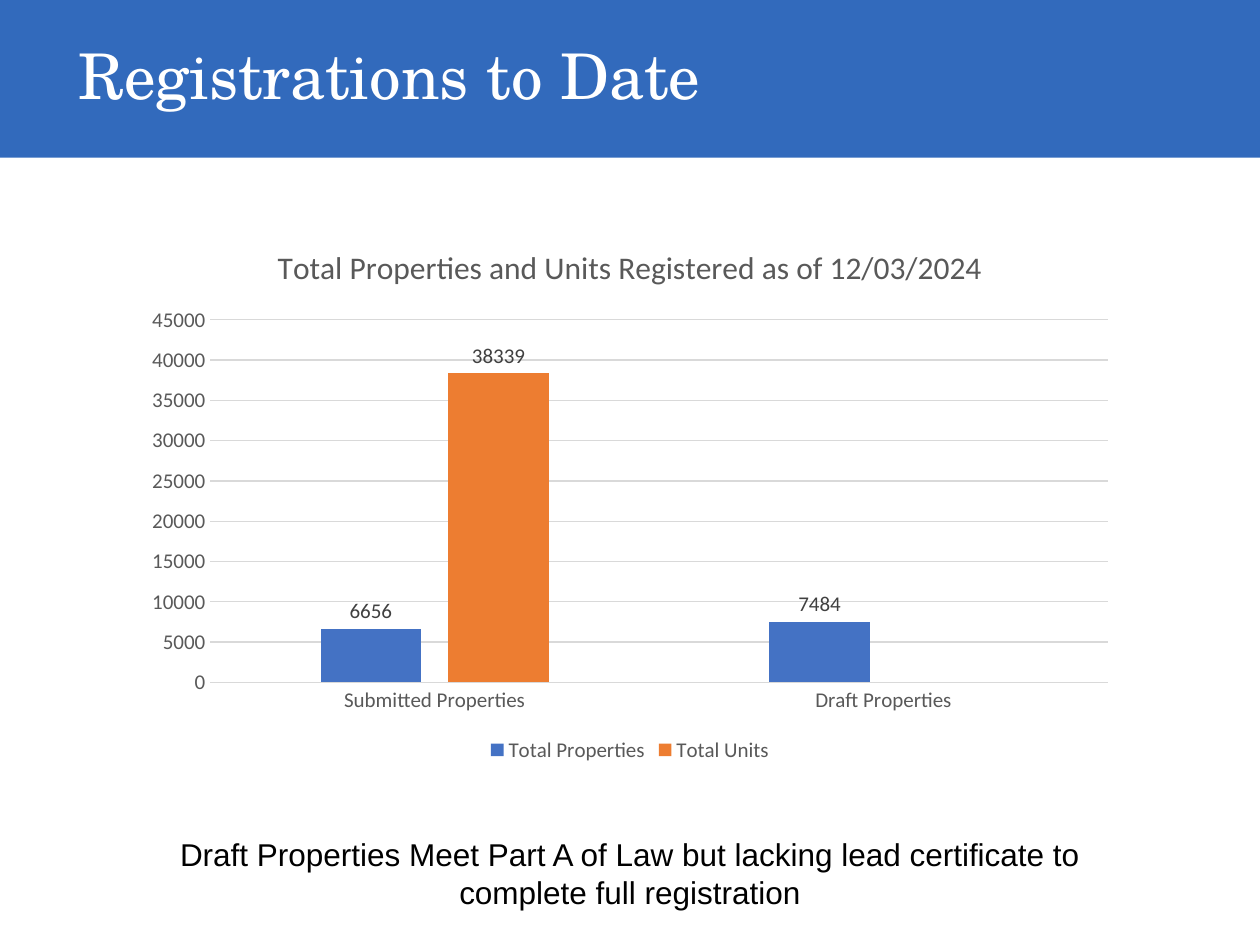
from dataclasses import dataclass

from pptx import Presentation
from pptx.chart.data import CategoryChartData
from pptx.dml.color import RGBColor
from pptx.enum.chart import XL_CHART_TYPE, XL_LABEL_POSITION, XL_LEGEND_POSITION, XL_TICK_MARK
from pptx.enum.shapes import MSO_SHAPE
from pptx.enum.text import MSO_ANCHOR, MSO_AUTO_SIZE, PP_ALIGN
from pptx.util import Cm, Pt

HEADING = "Registrations to Date"
CHART_HEADING = "Total Properties and Units Registered as of 12/03/2024"
NOTE = ("Draft Properties Meet Part A of Law but lacking lead certificate "
        "to complete full registration")
STATUSES = ["Submitted Properties", "Draft Properties"]
REGISTRATIONS = [
    ("Total Properties", (6656, 7484), "4472C4"),
    ("Total Units", (38339, None), "ED7D31"),
]


@dataclass(frozen=True)
class Theme:
    band: str = "326ABC"
    white: str = "FFFFFF"
    black: str = "000000"
    axis_text: str = "595959"
    label_text: str = "404040"
    rule: str = "D9D9D9"
    heading_font: str = "TeX Gyre Schola"
    chart_font: str = "Calibri"
    note_font: str = "Arial"
    heading_size: int = 36
    large_size: int = 18
    chart_size: int = 12


THEME = Theme()
SLIDE_WIDTH, SLIDE_HEIGHT = Cm(25.4), Cm(19.05)
CONTENT_WIDTH = Cm(20.07)
CONTENT_LEFT = (SLIDE_WIDTH - CONTENT_WIDTH) // 2


def format_font(font, name, size, color):
    font.name, font.size, font.bold = name, Pt(size), False
    font.color.rgb = RGBColor.from_string(color)


def write_text(frame, text, *, font, size, color, align=PP_ALIGN.LEFT,
               anchor=MSO_ANCHOR.TOP, line_spacing=None):
    frame.word_wrap = True
    frame.auto_size = MSO_AUTO_SIZE.NONE
    frame.vertical_anchor = anchor
    paragraph = frame.paragraphs[0]
    paragraph.alignment = align
    paragraph.line_spacing = line_spacing
    run = paragraph.add_run()
    run.text = text
    format_font(run.font, font, size, color)


def add_header(slide):
    band = slide.shapes.add_shape(MSO_SHAPE.RECTANGLE, 0, 0, SLIDE_WIDTH, Cm(3.18))
    band.shadow.inherit = False
    band.fill.solid()
    band.fill.fore_color.rgb = RGBColor.from_string(THEME.band)
    band.line.fill.background()

    heading = slide.shapes.title
    heading.element.addprevious(band.element)  # the band sits behind the heading
    heading.left, heading.top = Cm(1.32), Cm(0.28)
    heading.width, heading.height = Cm(20.32), Cm(2.62)
    write_text(heading.text_frame, HEADING, font=THEME.heading_font,
               size=THEME.heading_size, color=THEME.white,
               anchor=MSO_ANCHOR.MIDDLE, line_spacing=0.9)


def style_rule(line):
    line.color.rgb = RGBColor.from_string(THEME.rule)
    line.width = Pt(0.75)


def add_registrations_chart(slide):
    registrations = CategoryChartData()
    registrations.categories = STATUSES
    for name, counts, _ in REGISTRATIONS:
        registrations.add_series(name, counts)
    chart = slide.shapes.add_chart(
        XL_CHART_TYPE.COLUMN_CLUSTERED, CONTENT_LEFT, Cm(4.47),
        CONTENT_WIDTH, Cm(11), registrations).chart
    format_font(chart.font, THEME.chart_font, THEME.chart_size, THEME.axis_text)

    chart.has_title = True
    chart.chart_title.include_in_layout = False
    caption = chart.chart_title.text_frame.paragraphs[0].add_run()
    caption.text = CHART_HEADING
    format_font(caption.font, THEME.chart_font, THEME.large_size, THEME.axis_text)

    chart.has_legend = True
    chart.legend.position = XL_LEGEND_POSITION.BOTTOM
    chart.legend.include_in_layout = False

    for axis in (chart.category_axis, chart.value_axis):
        axis.major_tick_mark = axis.minor_tick_mark = XL_TICK_MARK.NONE
    style_rule(chart.category_axis.format.line)
    chart.value_axis.format.line.fill.background()
    style_rule(chart.value_axis.major_gridlines.format.line)

    columns = chart.plots[0]
    columns.gap_width, columns.overlap = 219, -27
    columns.vary_by_categories = False
    for series, (_, _, color) in zip(columns.series, REGISTRATIONS):
        series.format.fill.solid()
        series.format.fill.fore_color.rgb = RGBColor.from_string(color)
        labels = series.data_labels
        labels.show_value = True
        labels.position = XL_LABEL_POSITION.OUTSIDE_END
        format_font(labels.font, THEME.chart_font, THEME.chart_size, THEME.label_text)


def add_note(slide):
    note = slide.shapes.add_textbox(CONTENT_LEFT, Cm(16.71), CONTENT_WIDTH, Cm(1.8))
    write_text(note.text_frame, NOTE, font=THEME.note_font, size=THEME.large_size,
               color=THEME.black, align=PP_ALIGN.CENTER)


def main():
    presentation = Presentation()
    presentation.slide_width, presentation.slide_height = SLIDE_WIDTH, SLIDE_HEIGHT
    slide = presentation.slides.add_slide(
        presentation.slide_layouts.get_by_name("Title Only"))
    add_header(slide)
    add_registrations_chart(slide)
    add_note(slide)
    presentation.save("out.pptx")


if __name__ == "__main__":
    main()
